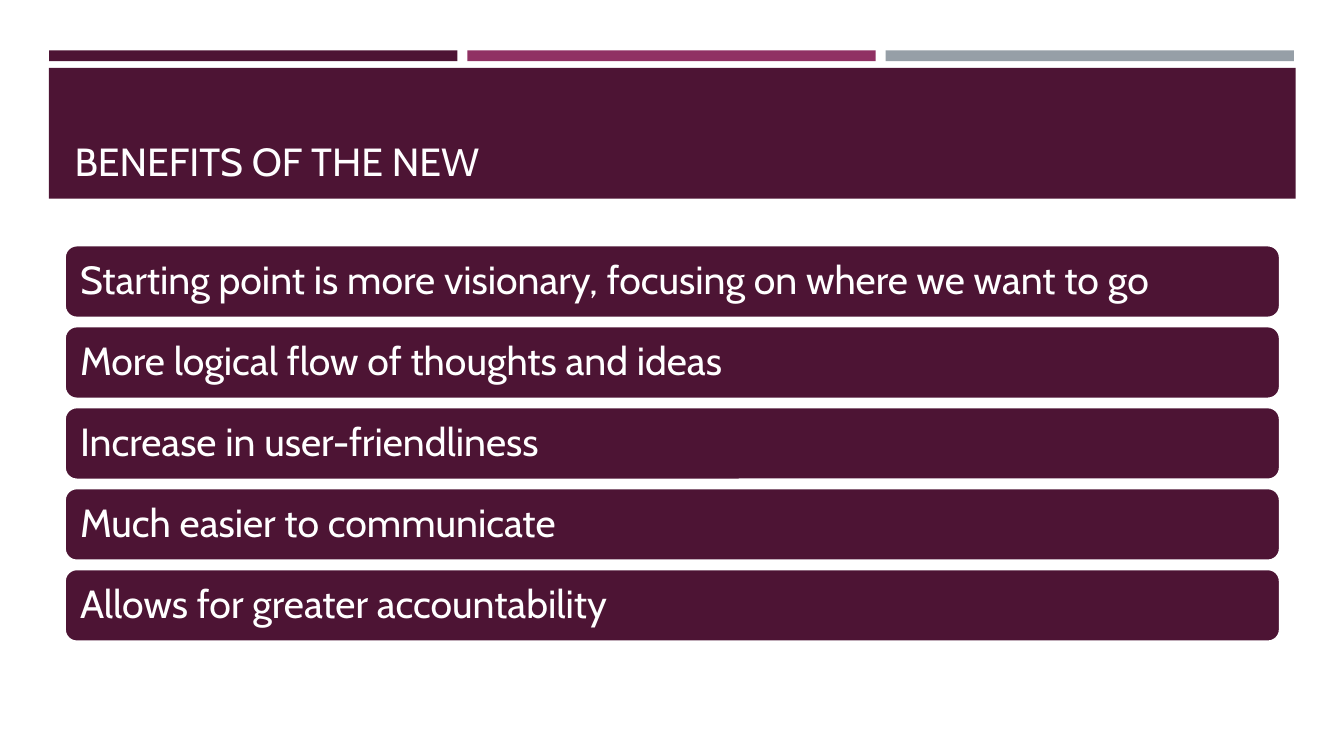
import dataclasses

import pptx
import pptx.dml.color
import pptx.enum.shapes
import pptx.enum.text
import pptx.slide
import pptx.util

Cm = pptx.util.Cm
SHAPE = pptx.enum.shapes.MSO_SHAPE
ANCHOR = pptx.enum.text.MSO_ANCHOR

COLORS = {"plum": "4D1434", "magenta": "903163", "gray": "969FA7",
          "white": "FFFFFF", "title": "FFFEFF"}
FONT = {"name": "Cabin", "size": pptx.util.Pt(28)}
TITLE_FRAME = {"word_wrap": True, "vertical_anchor": ANCHOR.BOTTOM}
BENEFIT_FRAME = {"word_wrap": True, "vertical_anchor": ANCHOR.MIDDLE,
                 "margin_left": Cm(0.3), "margin_right": Cm(0.3),
                 "margin_top": Cm(0.3), "margin_bottom": Cm(0.3)}
BENEFITS = [
    "Starting point is more visionary, focusing on where we want to go",
    "More logical flow of thoughts and ideas",
    "Increase in user-friendliness",
    "Much easier to communicate",
    "Allows for greater accountability",
]


@dataclasses.dataclass
class Box:
    left: float
    top: float
    width: float
    height: float
    fill: str = "plum"
    text: str = ""

    def place(self) -> tuple:
        return Cm(self.left), Cm(self.top), Cm(self.width), Cm(self.height)


def rgb(name: str) -> pptx.dml.color.RGBColor:
    return pptx.dml.color.RGBColor.from_string(COLORS[name])


def apply(target: object, values: dict) -> None:
    for key, value in values.items():
        setattr(target, key, value)


def draw_box(s: pptx.slide.Slide, box: Box, kind=SHAPE.RECTANGLE):
    sp = s.shapes.add_shape(kind, *box.place())
    sp.shadow.inherit = False
    sp.fill.solid()
    sp.fill.fore_color.rgb = rgb(box.fill)
    sp.line.fill.background()
    return sp


def write(sp, text: str, color: str, frame: dict, spacing: float) -> None:
    tf = sp.text_frame
    apply(tf, frame)
    p = tf.paragraphs[0]
    apply(p, {"alignment": pptx.enum.text.PP_ALIGN.LEFT, "line_spacing": spacing})
    r = p.add_run()
    r.text = text
    apply(r.font, FONT)
    r.font.color.rgb = rgb(color)


def draw_benefit(s: pptx.slide.Slide, box: Box) -> None:
    sp = draw_box(s, box, SHAPE.ROUNDED_RECTANGLE)
    sp.line.color.rgb = rgb("white")
    sp.line.width = pptx.util.Pt(1.75)
    write(sp, box.text, "white", BENEFIT_FRAME, 0.9)


def main() -> None:
    prs = pptx.Presentation()
    apply(prs, {"slide_width": Cm(33.87), "slide_height": Cm(19.05)})
    s = prs.slides.add_slide(prs.slide_layouts[6])

    for i, fill in enumerate(["plum", "magenta", "gray"]):
        draw_box(s, Box(1.24 + 10.54 * i, 1.27, 10.29, 0.27, fill))
    draw_box(s, Box(1.23, 1.71, 31.42, 3.3))

    title = Box(1.63, 1.96, 30.63, 2.82, text="BENEFITS OF THE NEW")
    write(s.shapes.add_textbox(*title.place()), title.text, "title", TITLE_FRAME, 1.0)

    for i, text in enumerate(BENEFITS):
        draw_benefit(s, Box(1.63, 6.18 + 2.04 * i, 30.63, 1.83, text=text))

    prs.save("out.pptx")


if __name__ == "__main__":
    main()
